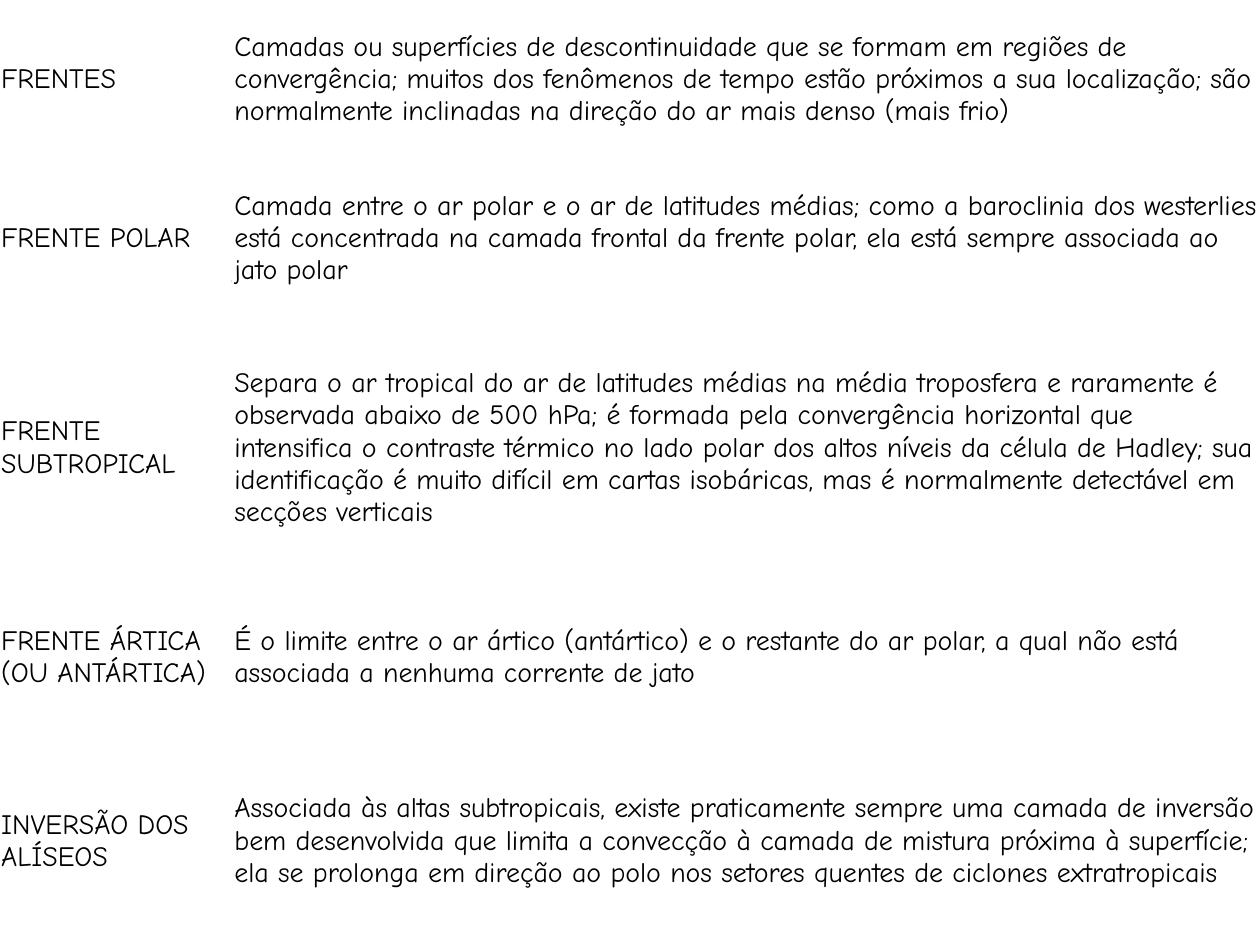
from pptx import Presentation
from pptx.dml.color import RGBColor
from pptx.enum.text import MSO_ANCHOR
from pptx.util import Inches, Pt

BLACK = RGBColor(0, 0, 0)
WIDTH, HEIGHT = Inches(10), Inches(7.5)
INSET = Inches(0.01)
COLUMN_PERCENTS = [18.5, 81.5]
ROW_PERCENTS = [16.8, 16.8, 27.6, 16.8, 22]

TABLE_FORMAT = {"first_row": False, "horz_banding": False}
CELL_FORMAT = {
    "vertical_anchor": MSO_ANCHOR.MIDDLE,
    "margin_left": INSET,
    "margin_right": INSET,
    "margin_top": INSET,
    "margin_bottom": INSET,
}
FONT_FORMAT = {"name": "Comic Neue", "size": Pt(16)}

DEFINITIONS = [
    ("FRENTES",
     "Camadas ou superfícies de descontinuidade que se formam em regiões de "
     "convergência; muitos dos fenômenos de tempo estão próximos a sua localização; "
     "são normalmente inclinadas na direção do ar mais denso (mais frio)"),
    ("FRENTE POLAR",
     "Camada entre o ar polar e o ar de latitudes médias; como a baroclinia dos "
     "westerlies está concentrada na camada frontal da frente polar, ela está sempre "
     "associada ao jato polar"),
    ("FRENTE SUBTROPICAL",
     "Separa o ar tropical do ar de latitudes médias na média troposfera e raramente é "
     "observada abaixo de 500 hPa; é formada pela convergência horizontal que "
     "intensifica o contraste térmico no lado polar dos altos níveis da célula de "
     "Hadley; sua identificação é muito difícil em cartas isobáricas, mas é normalmente "
     "detectável em secções verticais"),
    ("FRENTE ÁRTICA (OU ANTÁRTICA)",
     "É o limite entre o ar ártico (antártico) e o restante do ar polar, a qual não "
     "está associada a nenhuma corrente de jato"),
    ("INVERSÃO DOS ALÍSEOS",
     "Associada às altas subtropicais, existe praticamente sempre uma camada de "
     "inversão bem desenvolvida que limita a convecção à camada de mistura próxima à "
     "superfície; ela se prolonga em direção ao polo nos setores quentes de ciclones "
     "extratropicais"),
]


def apply_format(target, values):
    for attribute, value in values.items():
        setattr(target, attribute, value)


prs = Presentation()
prs.slide_width, prs.slide_height = WIDTH, HEIGHT
slide = prs.slides.add_slide(prs.slide_layouts[6])

glossary = slide.shapes.add_table(
    len(ROW_PERCENTS), len(COLUMN_PERCENTS), 0, 0, WIDTH, HEIGHT
).table
apply_format(glossary, TABLE_FORMAT)

for column, percent in zip(glossary.columns, COLUMN_PERCENTS):
    column.width = round(WIDTH * percent / 100)

for row, percent, definition in zip(glossary.rows, ROW_PERCENTS, DEFINITIONS):
    row.height = round(HEIGHT * percent / 100)
    for cell, wording in zip(row.cells, definition):
        cell.text = wording
        cell.fill.background()
        apply_format(cell, CELL_FORMAT)
        font = cell.text_frame.paragraphs[0].runs[0].font
        apply_format(font, FONT_FORMAT)
        font.color.rgb = BLACK

prs.save("out.pptx")
